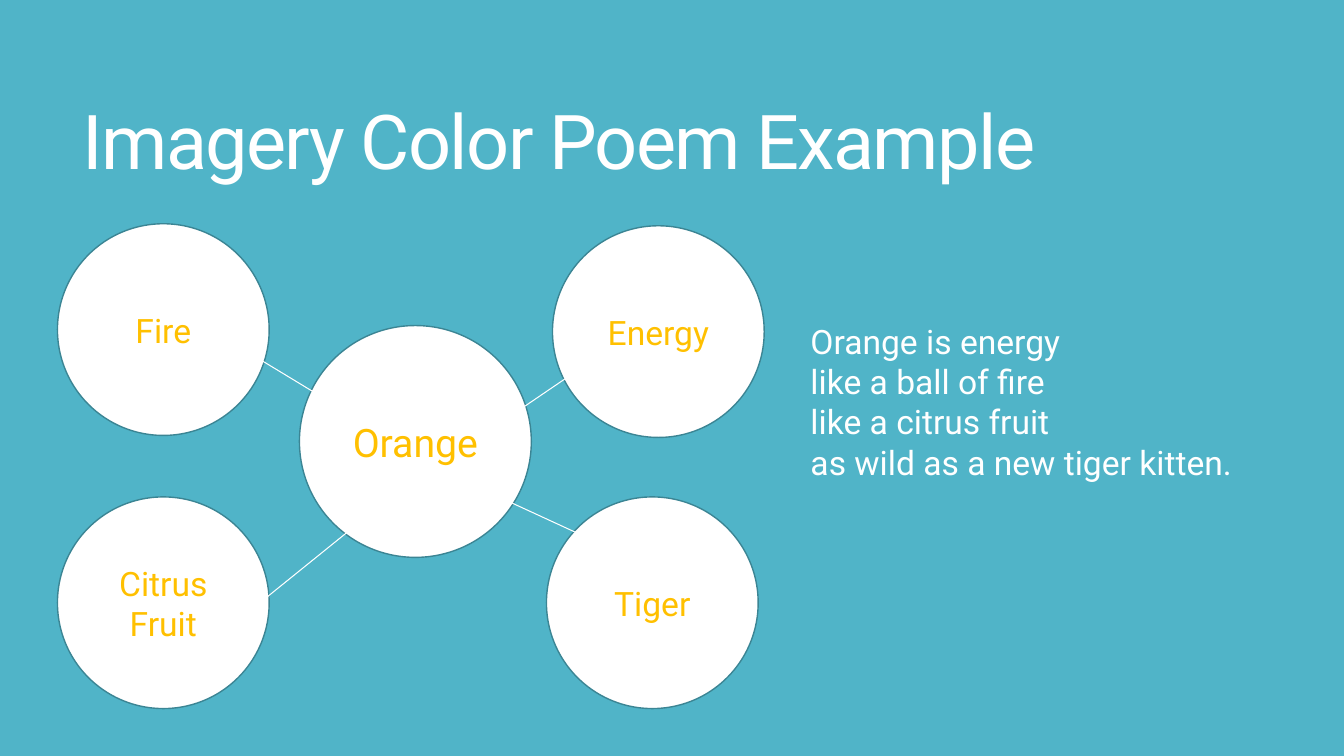
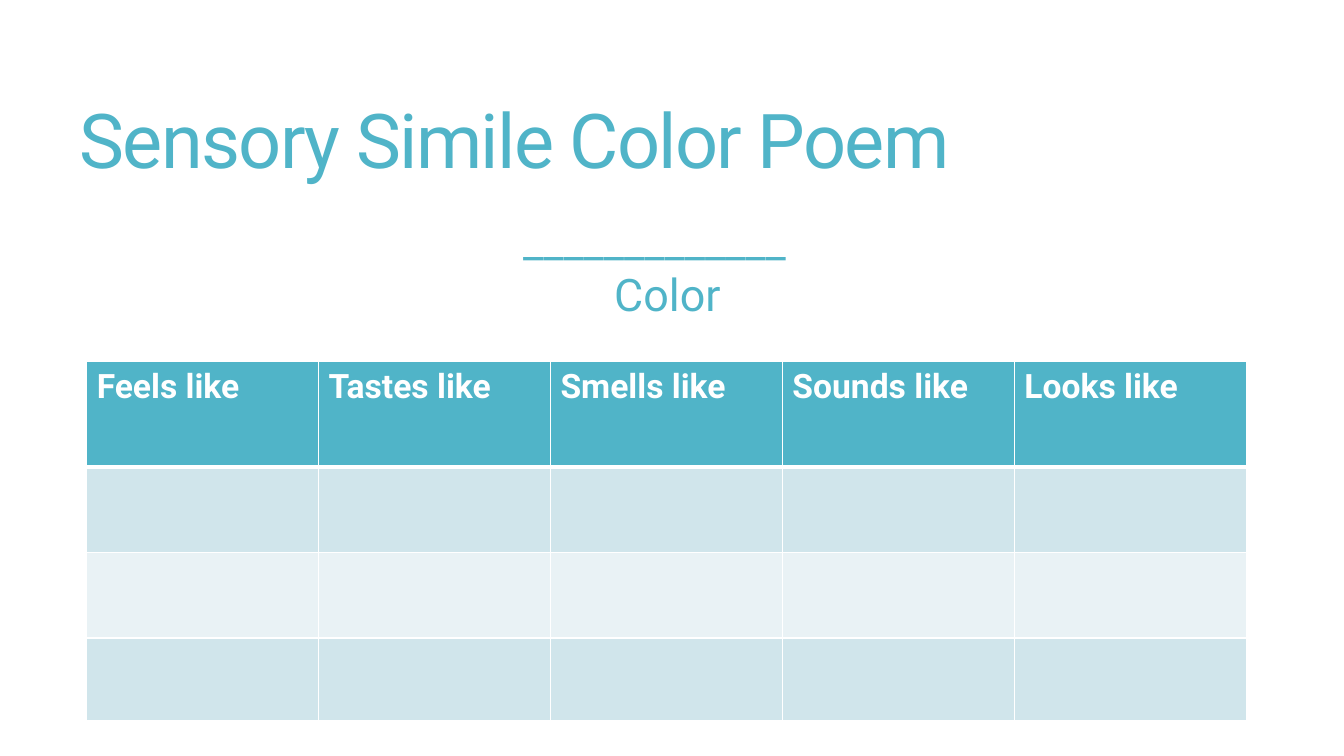
from lxml import etree
from pptx import Presentation
from pptx import util as u
from pptx.dml.color import RGBColor
from pptx.enum import shapes, text
from pptx.oxml import ns

SCALE = 9144
FONT = "Roboto"
TEAL, WHITE, AMBER, OUTLINE = "50B4C8", "FFFFFF", "FFC000", "3B8594"
BANDS = ("D0E5EB", "E9F2F5")
TITLE_SIZE = (1178, 181)


def px(*lengths):
    """Turn pixel lengths into EMU."""
    return [u.Emu(length * SCALE) for length in lengths]


def color(value):
    """Turn a hex string into a colour."""
    return RGBColor.from_string(value)


def format_text(text_frame, size, fill, bold=False):
    """Give every run of a text frame one font."""
    for paragraph in text_frame.paragraphs:
        for run in paragraph.runs:
            run.font.name = FONT
            run.font.size = u.Pt(size)
            run.font.bold = bold
            run.font.color.rgb = color(fill)


def add_titled_slide(presentation, title, position, background, title_color):
    """Add a slide with a plain background and a large left-aligned title."""
    slide = presentation.slides.add_slide(presentation.slide_layouts[5])
    slide.background.fill.solid()
    slide.background.fill.fore_color.rgb = color(background)
    shape = slide.shapes.title
    shape.left, shape.top, shape.width, shape.height = px(*position, *TITLE_SIZE)
    text_frame = shape.text_frame
    text_frame.text = title
    text_frame.auto_size = text.MSO_AUTO_SIZE.NONE
    text_frame.vertical_anchor = text.MSO_ANCHOR.MIDDLE
    paragraph = text_frame.paragraphs[0]
    paragraph.alignment = text.PP_ALIGN.LEFT
    paragraph.line_spacing = 0.85
    format_text(text_frame, 54, title_color)
    paragraph.runs[0]._r.get_or_add_rPr().set("spc", "-120")
    return slide


def add_text(slide, box, lines, size, fill):
    """Add a wrapping text box with one paragraph per line."""
    text_frame = slide.shapes.add_textbox(*px(*box)).text_frame
    text_frame.word_wrap = True
    text_frame.auto_size = text.MSO_AUTO_SIZE.SHAPE_TO_FIT_TEXT
    text_frame.text = "\n".join(lines)
    format_text(text_frame, size, fill)
    return text_frame


def add_bubble(slide, left, top, diameter, label, size):
    """Add a white circle with a centred label."""
    box = px(left, top, diameter, diameter)
    shape = slide.shapes.add_shape(shapes.MSO_SHAPE.OVAL, *box)
    shape.shadow.inherit = False
    shape.fill.solid()
    shape.fill.fore_color.rgb = color(WHITE)
    shape.line.color.rgb = color(OUTLINE)
    shape.line.width = u.Pt(1)
    shape.text_frame.text = label
    shape.text_frame.vertical_anchor = text.MSO_ANCHOR.MIDDLE
    shape.text_frame.paragraphs[0].alignment = text.PP_ALIGN.CENTER
    format_text(shape.text_frame, size, AMBER)


def add_link(slide, start, end):
    """Add a thin white line between two points."""
    connector = slide.shapes.add_connector(
        shapes.MSO_CONNECTOR.STRAIGHT, *px(*start, *end))
    connector.line.color.rgb = color(WHITE)
    connector.line.width = u.Pt(0.75)
    etree.SubElement(connector._element.spPr, ns.qn("a:effectLst"))


def add_word_web(slide, left, top):
    """Draw the central word, the four words around it and their links."""
    add_bubble(slide, left + 240, top + 101, 230, "Orange", 28)
    words = (
        ("Fire", 0, 0, (279, 182), (180, 122)),
        ("Energy", 491, 2, (443, 195), (512, 148)),
        ("Citrus Fruit", 0, 271, (207, 371), (306, 291)),
        ("Tiger", 485, 271, (531, 314), (429, 267)),
    )
    for label, x, y, _, _ in words:
        add_bubble(slide, left + x, top + y, 210, label, 24)
    for *_, start, end in words:
        add_link(slide, *((left + x, top + y) for x, y in (start, end)))


def set_borders(cell, top, bottom):
    """Give a cell white borders, with the top and bottom widths in points."""
    properties = cell._tc.get_or_add_tcPr()
    for side, width in (("L", 1), ("R", 1), ("T", top), ("B", bottom)):
        line = etree.SubElement(properties, ns.qn(f"a:ln{side}"), w=str(u.Pt(width)))
        fill = etree.SubElement(line, ns.qn("a:solidFill"))
        etree.SubElement(fill, ns.qn("a:srgbClr"), val=WHITE)


def add_sense_table(slide, left, top, column_width, row_heights, headings):
    """Add a table with a teal heading row and empty banded rows."""
    columns, rows = len(headings), len(row_heights)
    box = px(left, top, column_width * columns, sum(row_heights))
    table = slide.shapes.add_table(rows, columns, *box).table
    for row, height in enumerate(row_heights):
        table.rows[row].height = px(height)[0]
        for column, heading in enumerate(headings):
            cell = table.cell(row, column)
            set_borders(cell, 3 if row == 1 else 1, 3 if row == 0 else 1)
            cell.fill.solid()
            cell.fill.fore_color.rgb = color(BANDS[(row - 1) % 2] if row else TEAL)
            if row == 0:
                cell.text_frame.text = heading
                format_text(cell.text_frame, 24, WHITE, bold=True)


def build_example(presentation):
    """Build the slide with the word web and its poem."""
    slide = add_titled_slide(
        presentation, "Imagery Color Poem Example", (72, 55), TEAL, WHITE)
    poem = ("Orange is energy", "like a ball of fire", "like a citrus fruit",
            "as wild as a new tiger kitten.")
    add_text(slide, (794, 313, 495, 172), poem, 24, WHITE)
    add_word_web(slide, 57, 222)


def build_worksheet(presentation):
    """Build the slide with the table of senses to fill in."""
    slide = add_titled_slide(
        presentation, "Sensory Simile Color Poem", (69, 54), WHITE, TEAL)
    headings = [f"{sense} like"
                for sense in ("Feels", "Tastes", "Smells", "Sounds", "Looks")]
    add_sense_table(slide, 86, 359, 230, (104, 85, 85, 82), headings)
    blank = add_text(slide, (509, 206, 306, 118), ("_" * 13, "Color"), 32, TEAL)
    blank.paragraphs[1].alignment = text.PP_ALIGN.CENTER


def main():
    """Build and save the presentation."""
    presentation = Presentation()
    presentation.slide_width, presentation.slide_height = px(1333, 750)
    build_example(presentation)
    build_worksheet(presentation)
    presentation.save("out.pptx")


if __name__ == "__main__":
    main()
